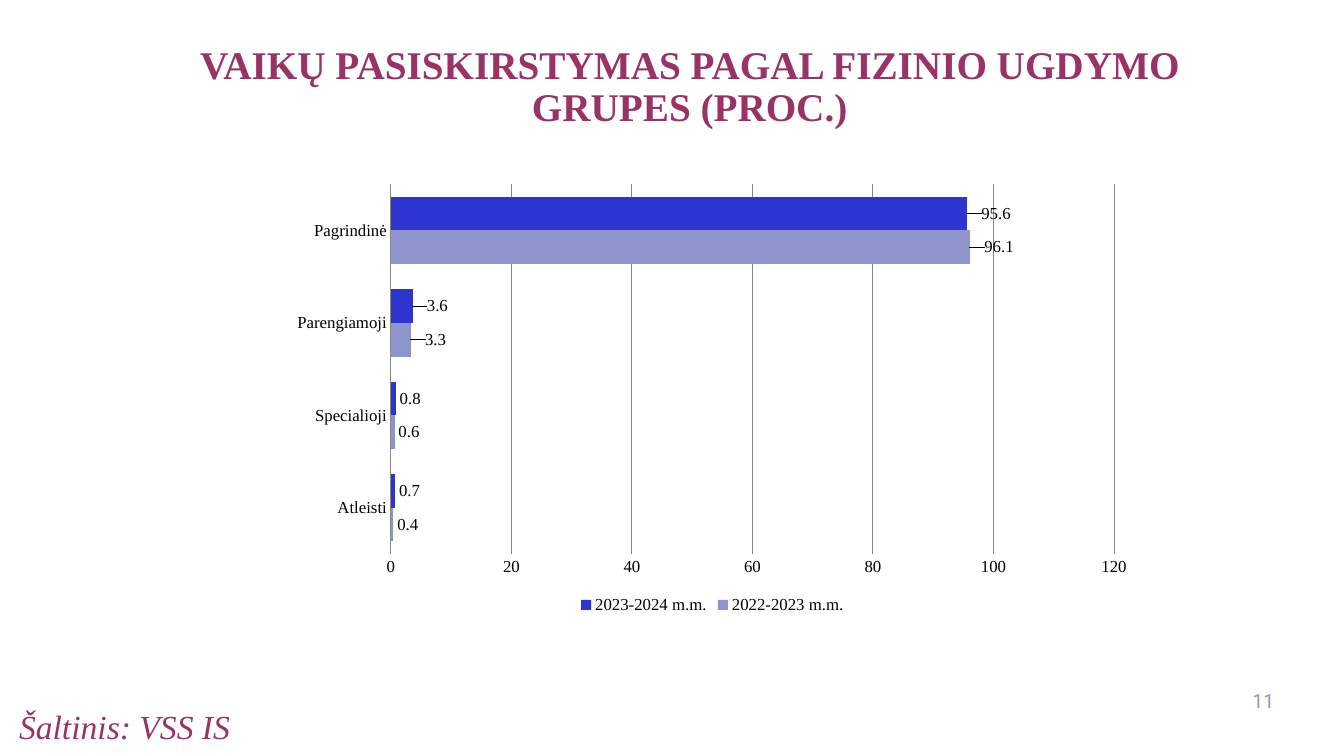
from lxml import etree
from pptx import Presentation
from pptx import util as u
from pptx.chart.data import CategoryChartData
from pptx.dml.color import RGBColor
from pptx.enum import chart as ch, text
from pptx.oxml.ns import qn

WIDTH, HEIGHT = u.Inches(13.33), u.Inches(7.5)
SERIF, SANS = "Times New Roman", "Roboto"

PLUM = RGBColor(0x99, 0x33, 0x66)
LAVENDER = RGBColor(0x8E, 0x96, 0xCD)
BAR_LIGHT = RGBColor(0x8D, 0x95, 0xCC)
BAR_DARK = RGBColor(0x2E, 0x34, 0xD0)
GRID_GREY = RGBColor(0x86, 0x86, 0x86)
BLACK = RGBColor(0, 0, 0)

GROUPS = ["Atleisti", "Specialioji", "Parengiamoji", "Pagrindinė"]
YEARS = [
    ("2022-2023 m.m.", (0.4, 0.6, 3.3, 96.1), BAR_LIGHT),
    ("2023-2024 m.m.", (0.7, 0.8, 3.6, 95.6), BAR_DARK),
]
SHIFTED_POINTS = (2, 3)


def area(left, top, width, height):
    """Turn percentages of the slide into lengths."""
    return (int(WIDTH * left / 100), int(HEIGHT * top / 100),
            int(WIDTH * width / 100), int(HEIGHT * height / 100))


def add_text(slide, box, words, size, color, font=SERIF, align=text.PP_ALIGN.LEFT,
             bold=False, italic=False, spacing=1.0):
    frame = slide.shapes.add_textbox(*box).text_frame
    frame.word_wrap = True
    frame.vertical_anchor = text.MSO_ANCHOR.TOP
    paragraph = frame.paragraphs[0]
    paragraph.alignment = align
    paragraph.line_spacing = spacing
    run = paragraph.add_run()
    run.text = words
    run.font.name, run.font.size = font, u.Pt(size)
    run.font.bold, run.font.italic = bold, italic
    run.font.color.rgb = color


def insert_layout(parent, index, **settings):
    """Place a manual layout among the children of a chart element."""
    layout = etree.Element(qn("c:layout"))
    manual = etree.SubElement(layout, qn("c:manualLayout"))
    for name, value in settings.items():
        etree.SubElement(manual, qn("c:" + name)).set("val", str(value))
    parent.insert(index, layout)


def style_series(series, color):
    series.format.fill.solid()
    series.format.fill.fore_color.rgb = color
    series.invert_if_negative = False
    labels = series.data_labels
    labels.show_value = True
    labels.position = ch.XL_LABEL_POSITION.OUTSIDE_END
    # Labels of the longer bars stand a little further out
    for index in SHIFTED_POINTS:
        series.points[index].data_label.position = ch.XL_LABEL_POSITION.OUTSIDE_END
    for label in series._element.iter(qn("c:dLbl")):
        insert_layout(label, 1, x=0.012, y=0)


def style_axes(chart):
    groups, percent = chart.category_axis, chart.value_axis
    for axis in (groups, percent):
        axis.major_tick_mark = axis.minor_tick_mark = ch.XL_TICK_MARK.NONE
    groups.format.line.color.rgb = GRID_GREY
    groups.format.line.width = u.Pt(0.75)
    percent.minimum_scale, percent.maximum_scale, percent.major_unit = 0, 120, 20
    percent.format.line.fill.background()
    percent.has_major_gridlines = True
    percent.major_gridlines.format.line.color.rgb = GRID_GREY
    percent.major_gridlines.format.line.width = u.Pt(0.75)


def add_bar_chart(slide, box):
    data = CategoryChartData(number_format="General")
    data.categories = GROUPS
    for name, values, _ in YEARS:
        data.add_series(name, values)
    chart = slide.shapes.add_chart(ch.XL_CHART_TYPE.BAR_CLUSTERED, *box, data).chart
    chart.font.name, chart.font.size = SERIF, u.Pt(12)
    chart.font.color.rgb = BLACK
    chart.has_title = False
    chart.has_legend = True
    chart.legend.position = ch.XL_LEGEND_POSITION.BOTTOM
    chart.legend.include_in_layout = False

    plot = chart.plots[0]
    plot.gap_width, plot.overlap = 75, 0
    plot.vary_by_categories = False
    for series, (_, _, color) in zip(plot.series, YEARS):
        style_series(series, color)
    style_axes(chart)

    # Fixed plot area
    plot_area = next(chart._chartSpace.iter(qn("c:plotArea")))
    for layout in plot_area.findall(qn("c:layout")):
        plot_area.remove(layout)
    insert_layout(plot_area, 0, layoutTarget="inner", xMode="edge", yMode="edge",
                  x=0.128, y=0.02, w=0.837, h=0.836)


def main():
    presentation = Presentation()
    presentation.slide_width, presentation.slide_height = WIDTH, HEIGHT
    slide = presentation.slides.add_slide(presentation.slide_layouts[6])

    # Title
    add_text(slide, area(8.18, 5.33, 86.27, 15.07),
             "VAIKŲ PASISKIRSTYMAS PAGAL FIZINIO UGDYMO GRUPES (PROC.)",
             28, PLUM, align=text.PP_ALIGN.CENTER, bold=True, spacing=0.9)

    # Chart
    add_bar_chart(slide, area(20.86, 23.2, 64.29, 58.53))

    # Source and page number
    add_text(slide, area(0.68, 92.67, 47.26, 5.07), "Šaltinis: VSS IS",
             24, PLUM, italic=True)
    add_text(slide, area(91.67, 90.53, 3.9, 5.33), "11", 14, LAVENDER,
             font=SANS, align=text.PP_ALIGN.RIGHT)

    presentation.save("out.pptx")


if __name__ == "__main__":
    main()
